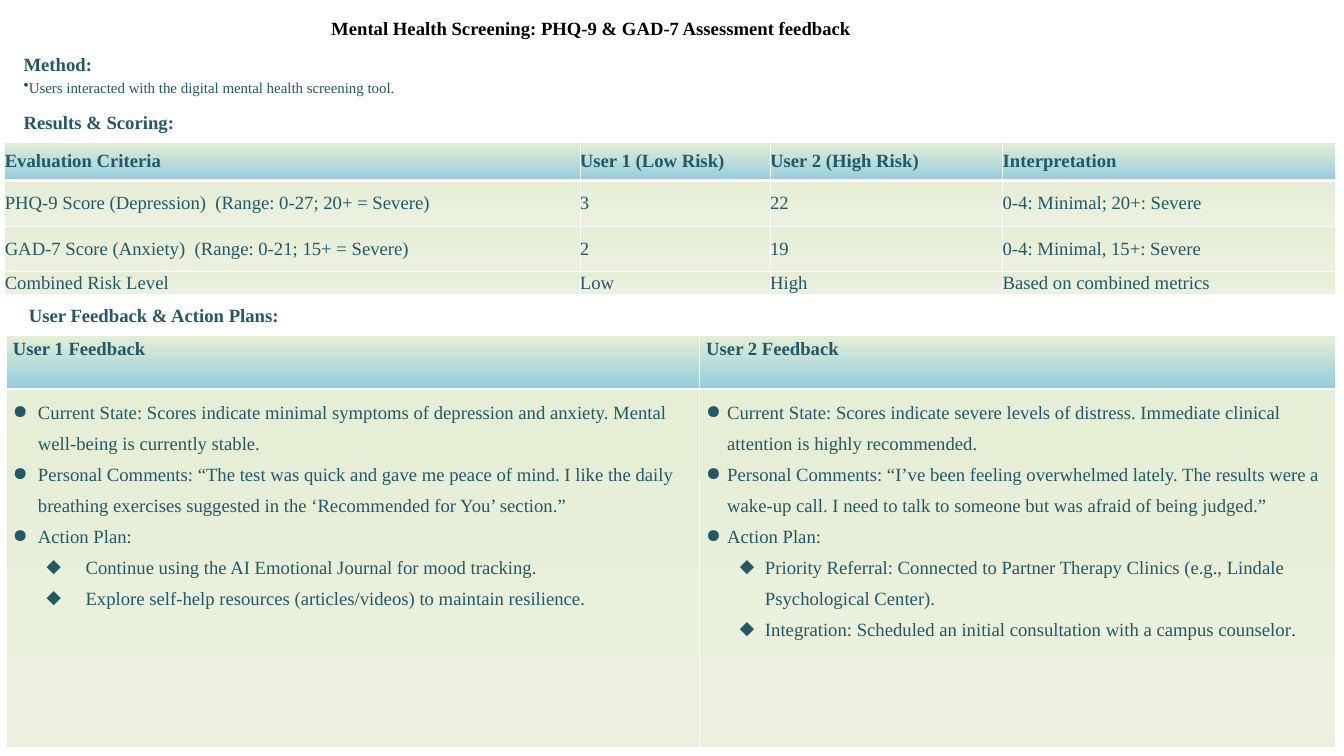
"""Build the PHQ-9 and GAD-7 screening feedback slide."""
from lxml.etree import SubElement
from pptx import Presentation
from pptx.dml.color import RGBColor
from pptx.enum.text import MSO_ANCHOR as Anchor
from pptx.oxml import parse_xml
from pptx.oxml.ns import nsdecls, qn
from pptx.util import Cm, Pt

TEAL = RGBColor(0x21, 0x59, 0x68)
BLACK = RGBColor(0, 0, 0)
WHITE = RGBColor(255, 255, 255)
PALE = RGBColor(0xE6, 0xEE, 0xD5)
BLUE = RGBColor(0x93, 0xCD, 0xDD)
CREAM = RGBColor(0xEB, 0xF1, 0xDE)


class FeedbackSlide:
    """Holds the style and the slide, and adds each kind of element."""

    font = "Times New Roman"
    size = 20

    def __init__(self, slide):
        self.slide = slide

    def run(self, paragraph, wording, bold=False, color=TEAL, size=size):
        run = paragraph.add_run()
        run.text = wording
        font = run.font
        font.name, font.size, font.bold = self.font, Pt(size), bold
        font.color.rgb = color

    def bullet(self, paragraph, mark, margin=0.0, hanging=0.0):
        properties = paragraph._p.get_or_add_pPr()
        properties.set("marL", str(Cm(margin)))
        properties.set("indent", str(-Cm(hanging)))
        SubElement(properties, qn("a:buChar")).set("char", mark)

    def heading(self, wording, left, top, width, height, inset=0.13, color=TEAL):
        box = self.slide.shapes.add_textbox(Cm(left), Cm(top), Cm(width), Cm(height))
        frame = box.text_frame
        frame.word_wrap = True
        frame.margin_top = Cm(inset)
        title = frame.paragraphs[0]
        title.line_spacing = Pt(13)
        self.run(title, wording, True, color)
        return frame

    def note(self, frame, wording):
        paragraph = frame.add_paragraph()
        self.bullet(paragraph, "•")
        paragraph.space_before = Pt(4)
        self.run(paragraph, wording, size=16)

    def table(self, left, top, widths, heights):
        frame = self.slide.shapes.add_table(
            len(heights), len(widths), Cm(left), Cm(top), Cm(sum(widths)), Cm(sum(heights)))
        table = frame.table
        table.first_row = table.horz_banding = False
        for column, width in zip(table.columns, widths):
            column.width = Cm(width)
        for row, height in zip(table.rows, heights):
            row.height = Cm(height)
        for r in range(len(heights)):
            for c in range(len(widths)):
                self.paint(table.cell(r, c), r)
        return table

    def paint(self, cell, row):
        fill = cell.fill
        fill.gradient()
        fill.gradient_angle = 270
        for stop, color in zip(fill.gradient_stops, (PALE, CREAM if row else BLUE)):
            stop.color.rgb = color
        thick = {0: "B", 1: "T"}.get(row)
        for place, side in enumerate("LRTB"):
            width = Pt(3 if side == thick else 1)
            cell._tc.get_or_add_tcPr().insert(place, parse_xml(
                f'<a:ln{side} {nsdecls("a")} w="{width}"><a:solidFill>'
                f'<a:srgbClr val="{WHITE}"/></a:solidFill></a:ln{side}>'))

    def score(self, cell, wording, bold):
        cell.margin_left = cell.margin_right = cell.margin_top = cell.margin_bottom = 0
        cell.vertical_anchor = Anchor.MIDDLE
        self.run(cell.text_frame.paragraphs[0], wording, bold)

    def feedback(self, cell, points, actions, point_margin, action_margin, action_hanging):
        frame = cell.text_frame
        items = [(0, "●", point_margin, point_margin, point) for point in points]
        items += [(1, "◆", action_margin, action_hanging, action) for action in actions]
        for index, (level, mark, margin, hanging, wording) in enumerate(items):
            paragraph = frame.add_paragraph() if index else frame.paragraphs[0]
            self.bullet(paragraph, mark, margin, hanging)
            paragraph.level = level
            paragraph.line_spacing = 1.5
            self.run(paragraph, wording)
        return paragraph


SCORES = [
    ("Evaluation Criteria", "User 1 (Low Risk)", "User 2 (High Risk)", "Interpretation"),
    ("PHQ-9 Score (Depression)  (Range: 0-27; 20+ = Severe)", "3", "22",
     "0-4: Minimal; 20+: Severe"),
    ("GAD-7 Score (Anxiety)  (Range: 0-21; 15+ = Severe)", "2", "19",
     "0-4: Minimal, 15+: Severe"),
    ("Combined Risk Level", "Low", "High", "Based on combined metrics"),
]
USER_1_POINTS = [
    "Current State: Scores indicate minimal symptoms of depression and anxiety. "
    "Mental well-being is currently stable.",
    "Personal Comments: “The test was quick and gave me peace of mind. I like the daily "
    "breathing exercises suggested in the ‘Recommended for You’ section.”",
    "Action Plan:",
]
USER_1_ACTIONS = [
    "Continue using the AI Emotional Journal for mood tracking.",
    "Explore self-help resources (articles/videos) to maintain resilience.",
]
USER_2_POINTS = [
    "Current State: Scores indicate severe levels of distress. "
    "Immediate clinical attention is highly recommended.",
    "Personal Comments: “I’ve been feeling overwhelmed lately. The results were a "
    "wake-up call. I need to talk to someone but was afraid of being judged.”",
    "Action Plan:",
]
USER_2_ACTIONS = [
    "Priority Referral: Connected to Partner Therapy Clinics "
    "(e.g., Lindale Psychological Center).",
    "Integration: Scheduled an initial consultation with a campus counselor",
]


def main():
    deck = Presentation()
    deck.slide_width, deck.slide_height = Cm(50.8), Cm(28.58)
    page = FeedbackSlide(deck.slides.add_slide(deck.slide_layouts[6]))

    scoring = page.table(0.18, 5.38, (21.74, 7.19, 8.79, 12.57), (1.45, 1.73, 1.7, 0.86))
    for r, row in enumerate(SCORES):
        for c, wording in enumerate(row):
            page.score(scoring.cell(r, c), wording, r == 0)

    plans = page.table(0.23, 12.67, (26.21, 24.03), (2.03, 13.54))
    for c, user in enumerate(("User 1 Feedback", "User 2 Feedback")):
        page.run(plans.cell(0, c).text_frame.paragraphs[0], user, True)
    page.feedback(plans.cell(1, 0), USER_1_POINTS, USER_1_ACTIONS, 0.95, 2.75, 1.47)
    integration = page.feedback(
        plans.cell(1, 1), USER_2_POINTS, USER_2_ACTIONS, 0.79, 2.22, 0.95)
    page.run(integration, ".", color=BLACK, size=18)

    page.heading("Mental Health Screening: PHQ-9 & GAD-7 Assessment feedback",
                 12.27, 0, 29.29, 2.24, 1.04, BLACK)
    method = page.heading("Method:", 0.64, 2.24, 20.52, 1.55)
    page.note(method, "Users interacted with the digital mental health screening tool.")
    page.heading("Results & Scoring:", 0.64, 3.71, 14.12, 1.5, 0.87)
    page.heading("User Feedback & Action Plans:", 0.84, 11.73, 14.12, 0.76)
    deck.save("out.pptx")


if __name__ == "__main__":
    main()
